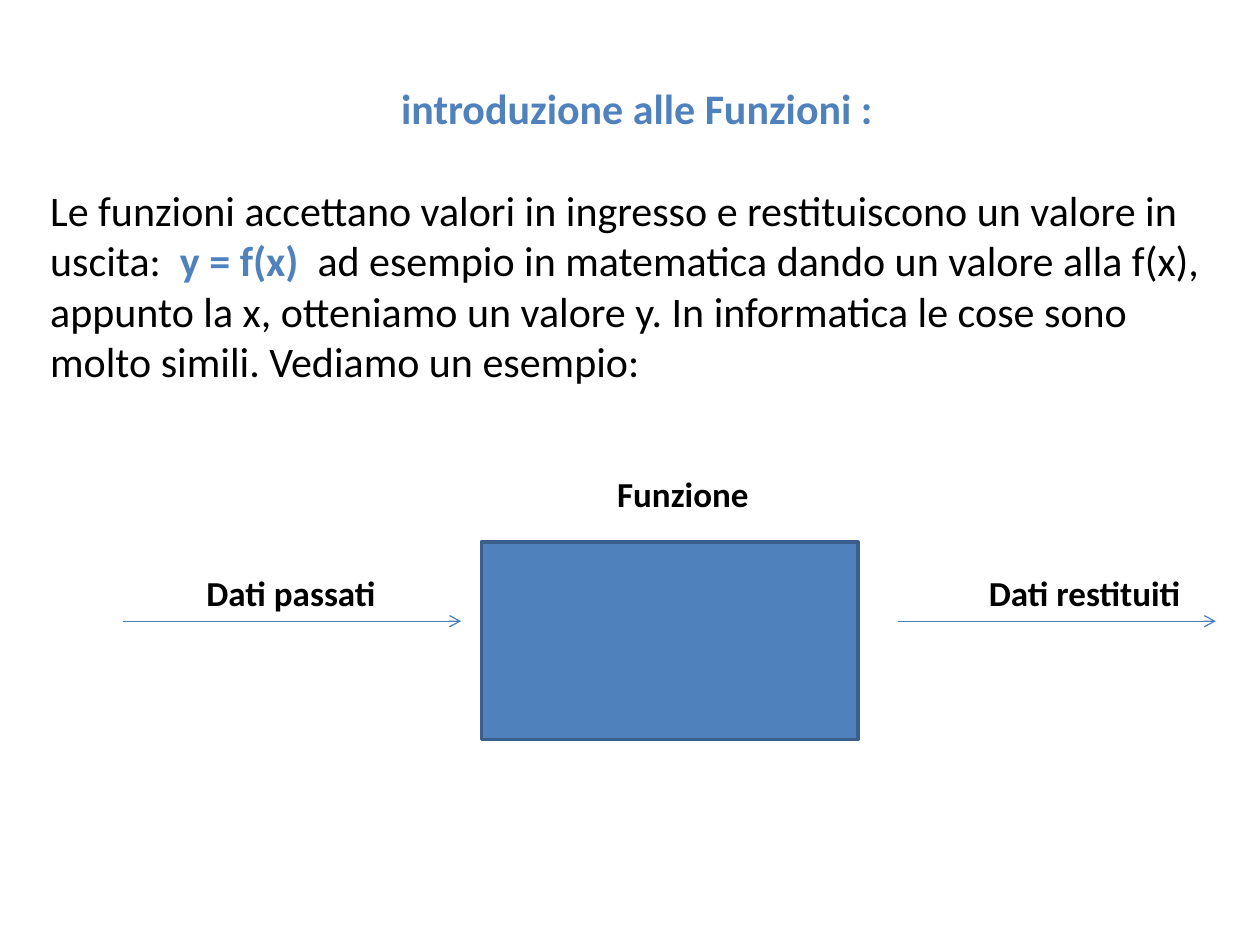
from lxml import etree
from pptx import Presentation
from pptx.dml.color import RGBColor
from pptx.enum import shapes, text
from pptx.oxml.ns import qn
from pptx.util import Inches, Pt

BLUE = RGBColor(0x4F, 0x81, 0xBD)
EDGE = RGBColor(0x3A, 0x5F, 0x8C)
ARROW = RGBColor(0x4B, 0x7E, 0xBC)
BLACK = RGBColor(0, 0, 0)


class Board:
    font = "Calibri"
    line = Pt(29.3)  # height of one 24 pt line

    def __init__(self, slide):
        self.slide = slide

    def frame(self, x, y, w, h, wrap):
        box = self.slide.shapes.add_textbox(
            Inches(x), Inches(y), Inches(w), Inches(h))
        frame = box.text_frame
        frame.word_wrap = wrap
        frame.auto_size = text.MSO_AUTO_SIZE.SHAPE_TO_FIT_TEXT
        return frame

    def style(self, run, size, color, bold):
        run.font.name = self.font
        run.font.size = Pt(size)
        run.font.color.rgb = color
        run.font.bold = bold

    def label(self, words, x, y, w):
        frame = self.frame(x, y, w, 0.44, False)
        frame.text = words
        self.style(frame.paragraphs[0].runs[0], 20, BLACK, True)

    def body(self, title, parts, x, y, w, h):
        frame = self.frame(x, y, w, h, True)
        frame.margin_top = Inches(0.05) + self.line
        head = frame.paragraphs[0]
        head.text = title
        head.alignment = text.PP_ALIGN.CENTER
        self.style(head.runs[0], 24, BLUE, True)
        para = frame.add_paragraph()
        para.space_before = self.line
        for words, color, bold in parts:
            run = para.add_run()
            run.text = words
            self.style(run, 24, color, bold)

    def block(self, x, y, w, h):
        rect = self.slide.shapes.add_shape(
            shapes.MSO_SHAPE.RECTANGLE,
            Inches(x), Inches(y), Inches(w), Inches(h))
        rect.shadow.inherit = False
        rect.fill.solid()
        rect.fill.fore_color.rgb = BLUE
        rect.line.color.rgb = EDGE
        rect.line.width = Pt(2)

    def arrow(self, start, end, y):
        link = self.slide.shapes.add_connector(
            shapes.MSO_CONNECTOR.STRAIGHT,
            Inches(start), Inches(y), Inches(end), Inches(y))
        link.line.color.rgb = ARROW
        link.line.width = Pt(0.75)
        tip = etree.SubElement(link.line._get_or_add_ln(), qn("a:tailEnd"))
        tip.set("type", "arrow")
        etree.SubElement(link._element.spPr, qn("a:effectLst"))


def main():
    deck = Presentation()
    deck.slide_width, deck.slide_height = Inches(10), Inches(7.5)
    board = Board(deck.slides.add_slide(deck.slide_layouts[6]))

    # Title and explanation
    board.body("introduzione alle Funzioni :", [
        ("Le funzioni accettano valori in ingresso e restituiscono "
         "un valore in uscita:  ", BLACK, False),
        ("y = f(x)  ", BLUE, True),
        ("ad esempio in matematica dando un valore alla f(x), appunto la x, "
         "otteniamo un valore y. In informatica le cose sono molto simili. "
         "Vediamo un esempio:", BLACK, False),
    ], 0.3, 0.2, 9.51, 2.93)

    # Function box with its input and output
    board.arrow(0.98, 3.66, 4.93)
    board.block(3.82, 4.3, 2.99, 1.57)
    board.arrow(7.13, 9.65, 4.93)

    # Labels
    board.label("Dati passati", 1.54, 4.49, 1.56)
    board.label("Funzione", 4.8, 3.7, 1.26)
    board.label("Dati restituiti", 7.75, 4.49, 1.74)

    deck.save("out.pptx")


if __name__ == "__main__":
    main()
